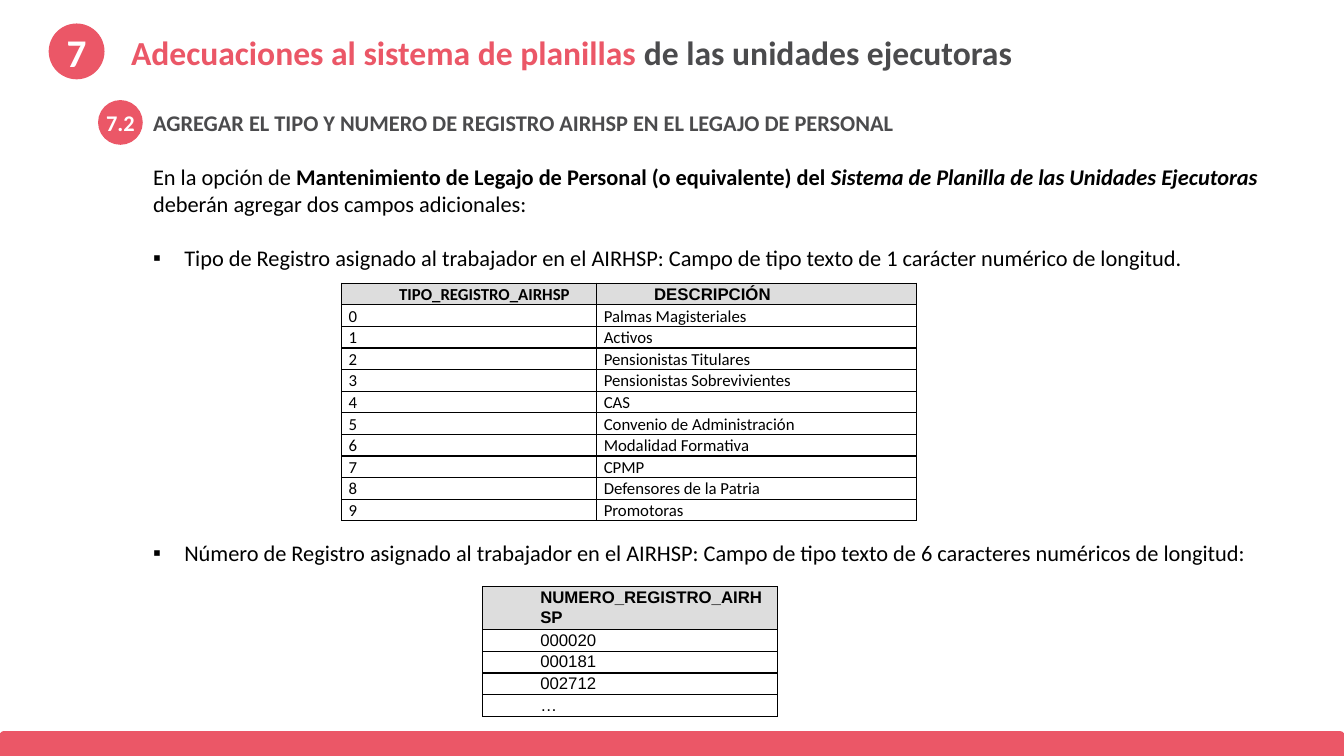
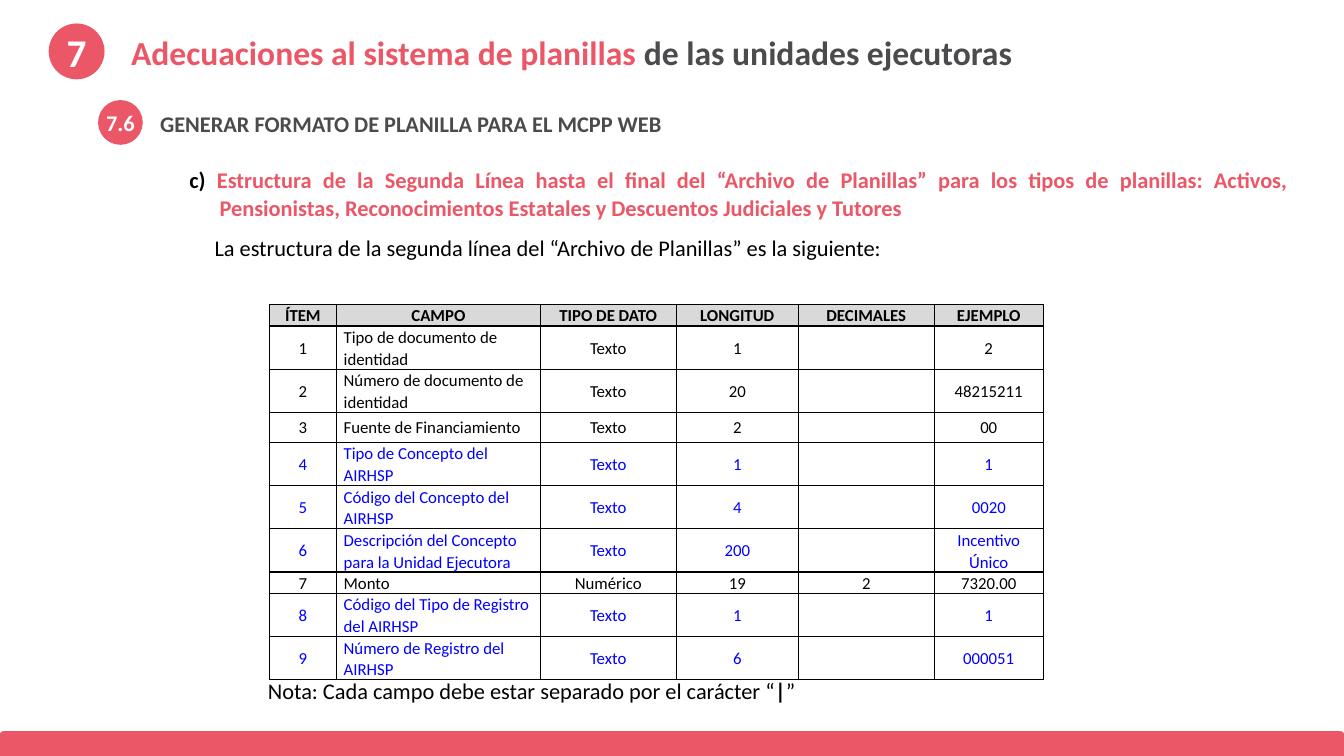
from collections import namedtuple

from lxml import etree
from pptx import Presentation
from pptx import util as u
from pptx.dml.color import RGBColor
from pptx.enum import shapes, text
from pptx.oxml import ns

Box = namedtuple("Box", "column row columns rows")
Run = namedtuple("Run", "text color bold italic", defaults=(None, None, None))

# The slide is a grid of 160 columns by 90 rows of square cells.
GRID = u.Inches(1) / 12
COLUMNS, ROWS = 160, 90

CORAL = RGBColor(0xEB, 0x57, 0x67)
CHARCOAL = RGBColor(0x4B, 0x4B, 0x4D)
BLACK = RGBColor(0, 0, 0)
WHITE = RGBColor(0xFF, 0xFF, 0xFF)
BLUE = RGBColor(0, 0, 0xFF)
LIGHT_GRAY = RGBColor(0xDD, 0xDD, 0xDD)
GRAY = RGBColor(0xD9, 0xD9, 0xD9)

FONT = "Calibri"
BODY_SIZE, TABLE_SIZE = 16, 12
LEFT, CENTER, JUSTIFY = text.PP_ALIGN.LEFT, text.PP_ALIGN.CENTER, text.PP_ALIGN.JUSTIFY

RECORD_TYPES = [
    "Palmas Magisteriales", "Activos", "Pensionistas Titulares",
    "Pensionistas Sobrevivientes", "CAS", "Convenio de Administración",
    "Modalidad Formativa", "CPMP", "Defensores de la Patria", "Promotoras",
]
RECORD_NUMBERS = ["000020", "000181", "002712", "…"]
FIELD_HEADERS = ["ÍTEM", "CAMPO", "TIPO DE DATO", "LONGITUD", "DECIMALES", "EJEMPLO"]
FIELDS = [
    ("Tipo de documento de identidad", "Texto", "1", "", "2"),
    ("Número de documento de identidad", "Texto", "20", "", "48215211"),
    ("Fuente de Financiamiento", "Texto", "2", "", "00"),
    ("Tipo de Concepto del AIRHSP", "Texto", "1", "", "1"),
    ("Código del Concepto del AIRHSP", "Texto", "4", "", "0020"),
    ("Descripción del Concepto para la Unidad Ejecutora", "Texto", "200", "", "Incentivo Único"),
    ("Monto", "Numérico", "19", "2", "7320.00"),
    ("Código del Tipo de Registro del AIRHSP", "Texto", "1", "", "1"),
    ("Número de Registro del AIRHSP", "Texto", "6", "", "000051"),
]
NEW_FIELDS = {4, 5, 6, 8, 9}
ONE_LINE_FIELDS = {3, 7}


def place(box):
    """Turn a box in grid cells into left, top, width and height."""
    return [u.Emu(round(length * GRID)) for length in box]


def set_margins(paragraph, left, indent=0):
    properties = paragraph._p.get_or_add_pPr()
    properties.set("marL", str(u.Inches(left)))
    properties.set("indent", str(u.Inches(indent)))


def add_bullet(paragraph):
    set_margins(paragraph, 0.31, -0.31)
    properties = paragraph._p.get_or_add_pPr()
    color = etree.SubElement(properties, ns.qn("a:buClr"))
    etree.SubElement(color, ns.qn("a:srgbClr"), val=str(BLACK))
    etree.SubElement(properties, ns.qn("a:buFont"), typeface="Arial")
    etree.SubElement(properties, ns.qn("a:buChar"), char="▪")


def write(paragraph, runs, size=BODY_SIZE, color=BLACK, bold=False, font=FONT,
          align=LEFT, spacing=None):
    """Fill a paragraph; runs hold only what departs from its font."""
    paragraph.alignment = align
    paragraph.line_spacing = spacing
    paragraph.font.name, paragraph.font.size = font, u.Pt(size)
    paragraph.font.bold = bold
    paragraph.font.color.rgb = color
    for part in runs:
        run = paragraph.add_run()
        run.text = part.text
        run.font.bold, run.font.italic = part.bold, part.italic
        if part.color is not None:
            run.font.color.rgb = part.color


def add_text_frame(slide, box):
    frame = slide.shapes.add_textbox(*place(box)).text_frame
    frame.word_wrap = True
    return frame


def add_filled_shape(slide, kind, box):
    shape = slide.shapes.add_shape(kind, *place(box))
    shape.shadow.inherit = False
    shape.fill.solid()
    shape.fill.fore_color.rgb = CORAL
    shape.line.color.rgb = CORAL
    shape.line.width = u.Pt(1)
    return shape


def add_badge(slide, box, label, size):
    frame = add_filled_shape(slide, shapes.MSO_SHAPE.OVAL, box).text_frame
    frame.margin_left = frame.margin_right = frame.margin_top = frame.margin_bottom = 0
    frame.word_wrap = False
    frame.vertical_anchor = text.MSO_ANCHOR.MIDDLE
    write(frame.paragraphs[0], [Run(label)], size, WHITE, bold=True, align=CENTER)


def add_title(slide, box):
    title = slide.shapes.title
    title.left, title.top, title.width, title.height = place(box)
    frame = title.text_frame
    frame.auto_size = text.MSO_AUTO_SIZE.NONE
    frame.vertical_anchor = text.MSO_ANCHOR.TOP
    frame.margin_left = frame.margin_right = u.Inches(0.13)
    frame.margin_top = frame.margin_bottom = u.Inches(0.13)
    write(frame.paragraphs[0],
          [Run("Adecuaciones al sistema de planillas ", CORAL),
           Run("de las unidades ejecutoras")],
          24, CHARCOAL, bold=True, align=JUSTIFY, spacing=1.15)


def add_section_slide(presentation, number, heading, heading_box):
    """Add a slide with the shared band, title, badges and section heading."""
    slide = presentation.slides.add_slide(presentation.slide_layouts[5])
    band = add_filled_shape(slide, shapes.MSO_SHAPE.ROUND_2_SAME_RECTANGLE,
                            Box(0, 87.12, COLUMNS, 2.88))
    band.adjustments[0], band.adjustments[1] = 0.17, 0
    add_title(slide, Box(14.04, 1.56, 144, 9.36))
    add_badge(slide, Box(5.88, 2.88, 6.48, 6.48), "7", 28)
    add_badge(slide, Box(11.76, 12, 5.16, 5.16), number, BODY_SIZE)
    frame = add_text_frame(slide, heading_box)
    write(frame.paragraphs[0], [Run(heading)], color=CHARCOAL, bold=True)
    return slide


def set_borders(cell):
    properties = cell._tc.get_or_add_tcPr()
    for side in ("a:lnL", "a:lnR", "a:lnT", "a:lnB"):
        line = etree.SubElement(properties, ns.qn(side), w=str(u.Pt(1)))
        fill = etree.SubElement(line, ns.qn("a:solidFill"))
        etree.SubElement(fill, ns.qn("a:srgbClr"), val=str(BLACK))


def add_grid_table(slide, box, column_shares, row_lines):
    """Add a bordered table whose box is split by column shares and text lines."""
    table = slide.shapes.add_table(len(row_lines), len(column_shares), *place(box)).table
    table.first_row = table.horz_banding = False
    for column, share in zip(table.columns, column_shares):
        column.width = u.Emu(round(box.columns * GRID * share / sum(column_shares)))
    for row, lines in zip(table.rows, row_lines):
        row.height = u.Emu(round(box.rows * GRID * lines / sum(row_lines)))
    return table


def write_cell(cell, content, fill=None, indent=0, middle=True, **style):
    cell.margin_left = cell.margin_right = u.Inches(0.07)
    cell.margin_top = cell.margin_bottom = 0
    cell.vertical_anchor = text.MSO_ANCHOR.MIDDLE if middle else text.MSO_ANCHOR.TOP
    set_borders(cell)
    if fill is None:
        cell.fill.background()
    else:
        cell.fill.solid()
        cell.fill.fore_color.rgb = fill
    paragraph = cell.text_frame.paragraphs[0]
    set_margins(paragraph, indent)
    write(paragraph, [Run(content)], TABLE_SIZE, spacing=1.07, **style)


def add_record_type_table(slide, box):
    table = add_grid_table(slide, box, [2.53, 3.17], [1] * (len(RECORD_TYPES) + 1))
    headers = [("TIPO_REGISTRO_AIRHSP", FONT), ("DESCRIPCIÓN", "Arial")]
    for column, (header, font) in enumerate(headers):
        write_cell(table.cell(0, column), header, LIGHT_GRAY, 0.5, bold=True, font=font)
    for code, description in enumerate(RECORD_TYPES):
        for column, content in enumerate((str(code), description)):
            write_cell(table.cell(code + 1, column), content, middle=False, align=JUSTIFY)


def add_record_number_table(slide, box):
    table = add_grid_table(slide, box, [1], [2] + [1] * len(RECORD_NUMBERS))
    for row, content in enumerate(["NUMERO_REGISTRO_AIRHSP"] + RECORD_NUMBERS):
        write_cell(table.cell(row, 0), content, None if row else LIGHT_GRAY, 0.5,
                   middle=False, bold=row == 0, font="Arial", align=JUSTIFY)


def add_field_table(slide, box):
    items = range(1, len(FIELDS) + 1)
    lines = [1] + [1 if item in ONE_LINE_FIELDS else 2 for item in items]
    table = add_grid_table(slide, box, [0.67, 2.02, 1.35, 1.21, 1.35, 1.08], lines)
    for column, header in enumerate(FIELD_HEADERS):
        write_cell(table.cell(0, column), header, GRAY, bold=True, align=CENTER)
    for item, field in zip(items, FIELDS):
        color = BLUE if item in NEW_FIELDS else BLACK
        for column, content in enumerate((str(item), *field)):
            write_cell(table.cell(item, column), content, color=color,
                       align=LEFT if column == 1 else CENTER)


def build_record_slide(presentation):
    slide = add_section_slide(
        presentation, "7.2",
        "AGREGAR EL TIPO Y NUMERO DE REGISTRO AIRHSP EN EL LEGAJO DE PERSONAL",
        Box(17.04, 12.36, 136.68, 4.44))
    frame = add_text_frame(slide, Box(17.04, 18.84, 136.68, 14.2))
    write(frame.paragraphs[0], [
        Run("En la opción de "),
        Run("Mantenimiento de Legajo de Personal (o equivalente) del ", bold=True),
        Run("Sistema de Planilla de las Unidades Ejecutoras ", bold=True, italic=True),
        Run("deberán agregar dos campos adicionales:"),
    ])
    type_bullet = frame.add_paragraph()
    type_bullet.space_before = u.Pt(19.5)
    number_bullet = add_text_frame(slide, Box(17.04, 63.6, 136.68, 4.44)).paragraphs[0]
    for bullet, content in (
        (type_bullet, "Tipo de Registro asignado al trabajador en el AIRHSP: "
                      "Campo de tipo texto de 1 carácter numérico de longitud."),
        (number_bullet, "Número de Registro asignado al trabajador en el AIRHSP: "
                        "Campo de tipo texto de 6 caracteres numéricos de longitud:"),
    ):
        add_bullet(bullet)
        write(bullet, [Run(content)])
    add_record_type_table(slide, Box(40.68, 33.72, 68.4, 28.3))
    add_record_number_table(slide, Box(57.48, 69.84, 35.04, 15.4))


def build_format_slide(presentation):
    slide = add_section_slide(
        presentation, "7.6", "GENERAR FORMATO DE PLANILLA PARA EL MCPP WEB",
        Box(17.88, 12.48, 136.68, 4.44))
    frame = add_text_frame(slide, Box(17.88, 18.96, 136.68, 12.7))
    structure = frame.paragraphs[0]
    set_margins(structure, 0.59, -0.3)
    write(structure, [
        Run("c) "),
        Run("Estructura de la Segunda Línea hasta el final del “Archivo de Planillas” "
            "para los tipos de planillas: Activos, Pensionistas, Reconocimientos "
            "Estatales y Descuentos Judiciales y Tutores", CORAL),
    ], bold=True, align=JUSTIFY, spacing=1.06)
    summary = frame.add_paragraph()
    summary.space_before = u.Pt(8)
    set_margins(summary, 0.54)
    write(summary, [Run("La estructura de la segunda línea del “Archivo de Planillas” "
                        "es la siguiente:")], align=JUSTIFY, spacing=1.06)
    add_field_table(slide, Box(32.04, 36.24, 92.16, 43.6))
    note = add_text_frame(slide, Box(30.72, 80.04, 82.8, 4.44)).paragraphs[0]
    write(note, [Run("Nota: Cada campo debe estar separado por el carácter “"),
                 Run("|", bold=True), Run("”")])


def main():
    presentation = Presentation()
    presentation.slide_width = u.Emu(round(COLUMNS * GRID))
    presentation.slide_height = u.Emu(round(ROWS * GRID))
    build_record_slide(presentation)
    build_format_slide(presentation)
    presentation.save("out.pptx")


if __name__ == "__main__":
    main()
